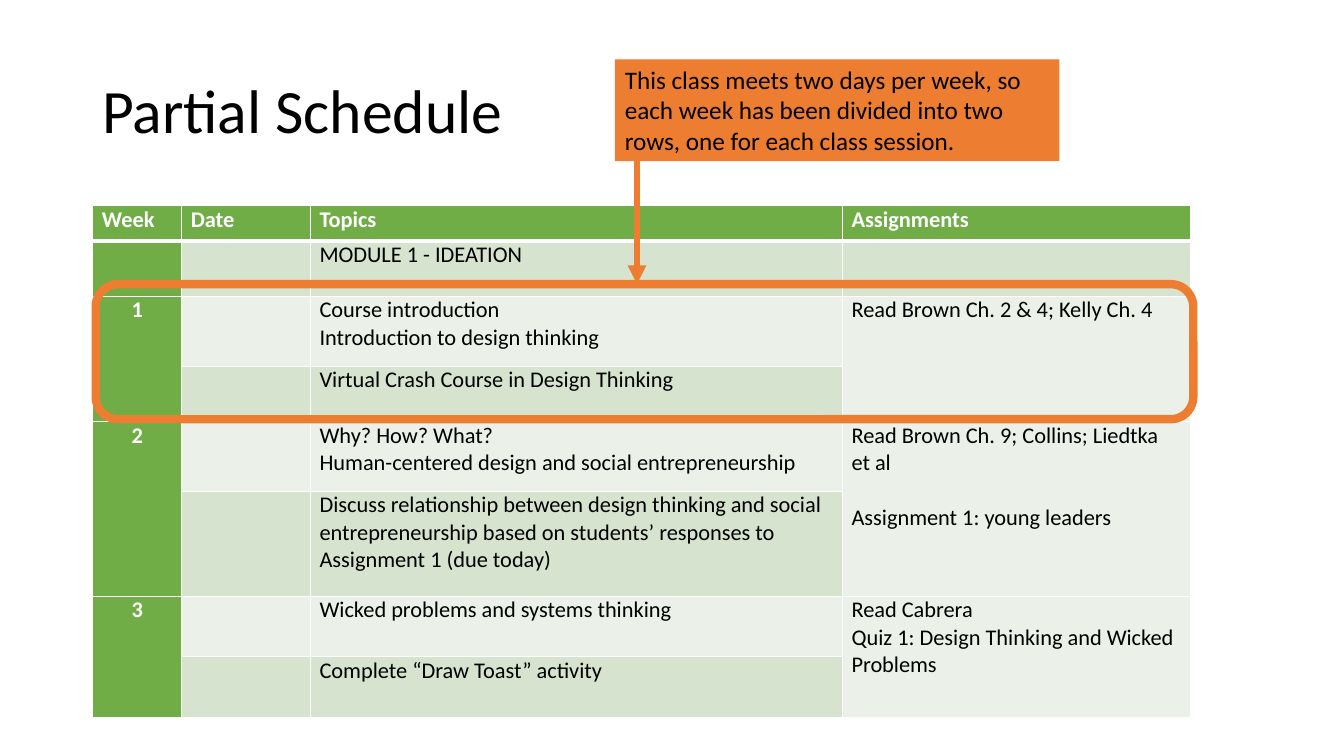
from pptx import Presentation
from pptx.dml.color import RGBColor
from pptx.enum.shapes import MSO_CONNECTOR, MSO_SHAPE
from pptx.enum.text import MSO_ANCHOR, PP_ALIGN
from pptx.oxml.ns import qn
from pptx.util import Pt
from lxml.etree import SubElement

FONT = "Calibri"
BLACK = RGBColor(0x00, 0x00, 0x00)
WHITE = RGBColor(0xFF, 0xFF, 0xFF)
GREEN = RGBColor(0x70, 0xAD, 0x47)
DARK_BAND = RGBColor(0xD5, 0xE3, 0xCF)
LIGHT_BAND = RGBColor(0xEB, 0xF1, 0xE9)
ORANGE = RGBColor(0xED, 0x7D, 0x31)

COLUMN_WIDTHS = [63.5, 92, 380, 249]
ROW_HEIGHTS = [25.2, 39.6, 49.8, 39.6, 49.8, 75, 43.2, 43.2]
ASSIGNMENT_GAP = 19.5

# Each cell is a list of paragraphs.
SCHEDULE = [
    [["Week"], ["Date"], ["Topics"], ["Assignments"]],
    [[], [], ["MODULE 1 - IDEATION"], []],
    [["1"], [], ["Course introduction", "Introduction to design thinking"],
     ["Read Brown Ch. 2 & 4; Kelly Ch. 4"]],
    [[], [], ["Virtual Crash Course in Design Thinking"], []],
    [["2"], [], ["Why? How? What?", "Human-centered design and social entrepreneurship"],
     ["Read Brown Ch. 9; Collins; Liedtka et al", "Assignment 1: young leaders"]],
    [[], [], ["Discuss relationship between design thinking and social entrepreneurship "
              "based on students’ responses to Assignment 1 (due today)"], []],
    [["3"], [], ["Wicked problems and systems thinking"],
     ["Read Cabrera", "Quiz 1: Design Thinking and Wicked Problems"]],
    [[], [], ["Complete “Draw Toast” activity"], []],
]
WEEK_STARTS = [2, 4, 6]


def add_run(para, text, size, color=BLACK, bold=False):
    span = para.add_run()
    span.text = text
    span.font.name = FONT
    span.font.size = Pt(size)
    span.font.bold = bold
    span.font.color.rgb = color


def add_title(page, text):
    box = page.shapes.add_textbox(Pt(66), Pt(28.8), Pt(828), Pt(104.4))
    frame = box.text_frame
    frame.word_wrap = True
    frame.vertical_anchor = MSO_ANCHOR.MIDDLE
    para = frame.paragraphs[0]
    para.line_spacing = 0.9
    add_run(para, text, 44)


def set_borders(cell, bottom_width):
    """Draw white borders; call before the fill, which must follow them in the XML."""
    properties = cell._tc.get_or_add_tcPr()
    for side, width in (("L", 1), ("R", 1), ("T", 1), ("B", bottom_width)):
        line = SubElement(properties, qn(f"a:ln{side}"), w=str(Pt(width)))
        fill = SubElement(line, qn("a:solidFill"))
        SubElement(fill, qn("a:srgbClr"), val=str(WHITE))


def fill_cell(cell, paragraphs, row, column):
    is_header = row == 0
    is_green = is_header or column == 0
    set_borders(cell, 3 if is_header else 1)
    cell.fill.solid()
    if is_green:
        cell.fill.fore_color.rgb = GREEN
    else:
        cell.fill.fore_color.rgb = DARK_BAND if row % 2 else LIGHT_BAND
    cell.margin_left = cell.margin_right = Pt(6.5)
    cell.margin_top = cell.margin_bottom = Pt(0)
    frame = cell.text_frame
    for index, text in enumerate(paragraphs):
        para = frame.add_paragraph() if index else frame.paragraphs[0]
        if column == 0 and not is_header:
            para.alignment = PP_ALIGN.CENTER
        if index and text.startswith("Assignment"):
            para.space_before = Pt(ASSIGNMENT_GAP)
        add_run(para, text, 16, WHITE if is_green else BLACK, is_green)


def add_schedule(page):
    table = page.shapes.add_table(
        len(ROW_HEIGHTS), len(COLUMN_WIDTHS), Pt(66.3), Pt(147),
        Pt(sum(COLUMN_WIDTHS)), Pt(sum(ROW_HEIGHTS))).table
    for column, width in zip(table.columns, COLUMN_WIDTHS):
        column.width = Pt(width)
    for row, height in zip(table.rows, ROW_HEIGHTS):
        row.height = Pt(height)
    for row, cells in enumerate(SCHEDULE):
        for column, paragraphs in enumerate(cells):
            fill_cell(table.cell(row, column), paragraphs, row, column)
    for start in WEEK_STARTS:
        for column in (0, 3):
            table.cell(start, column).merge(table.cell(start + 1, column))


def add_callout(page, text):
    box = page.shapes.add_shape(MSO_SHAPE.RECTANGLE, Pt(439.2), Pt(42.5), Pt(317.5), Pt(72.7))
    box.shadow.inherit = False
    box.fill.solid()
    box.fill.fore_color.rgb = ORANGE
    box.line.fill.background()
    frame = box.text_frame
    frame.word_wrap = True
    frame.vertical_anchor = MSO_ANCHOR.TOP
    para = frame.paragraphs[0]
    para.alignment = PP_ALIGN.LEFT
    add_run(para, text, 18)


def add_week_outline(page):
    outline = page.shapes.add_shape(
        MSO_SHAPE.ROUNDED_RECTANGLE, Pt(68.4), Pt(203), Pt(784), Pt(96.5))
    outline.shadow.inherit = False
    outline.fill.background()
    outline.line.color.rgb = ORANGE
    outline.line.width = Pt(6)


def add_down_arrow(page, x, top, bottom):
    arrow = page.shapes.add_connector(
        MSO_CONNECTOR.STRAIGHT, Pt(x), Pt(top), Pt(x), Pt(bottom))
    arrow.line.color.rgb = ORANGE
    arrow.line.width = Pt(4.5)
    SubElement(arrow.line._get_or_add_ln(), qn("a:tailEnd"), type="triangle")
    SubElement(arrow._element.spPr, qn("a:effectLst"))


def main():
    deck = Presentation()
    deck.slide_width, deck.slide_height = Pt(960), Pt(540)
    page = deck.slides.add_slide(deck.slide_layouts[6])
    add_title(page, "Partial Schedule")
    add_schedule(page)
    add_callout(page, "This class meets two days per week, so each week has been divided "
                      "into two rows, one for each class session.")
    add_week_outline(page)
    add_down_arrow(page, 455, 115.2, 203)
    deck.save("out.pptx")


if __name__ == "__main__":
    main()
